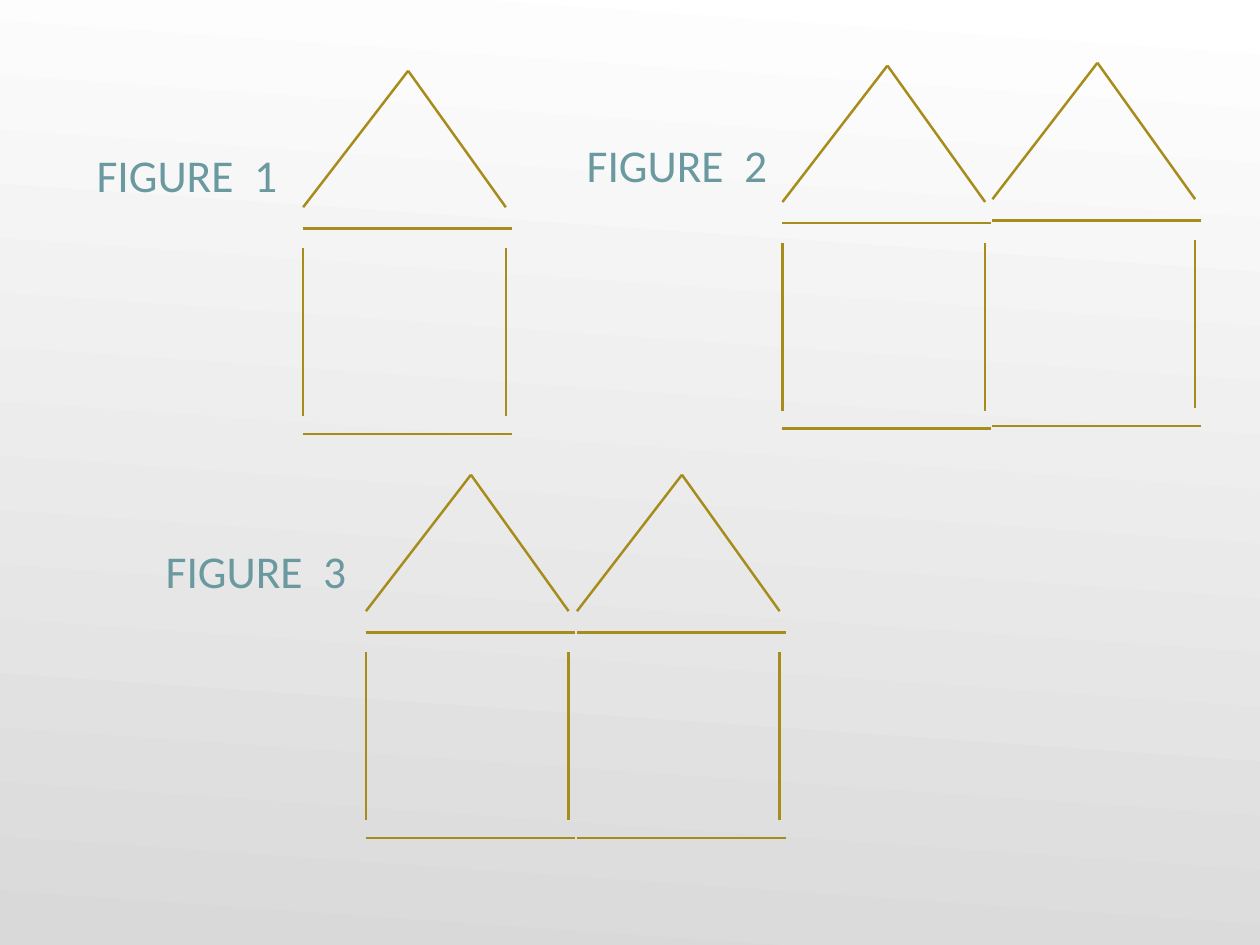
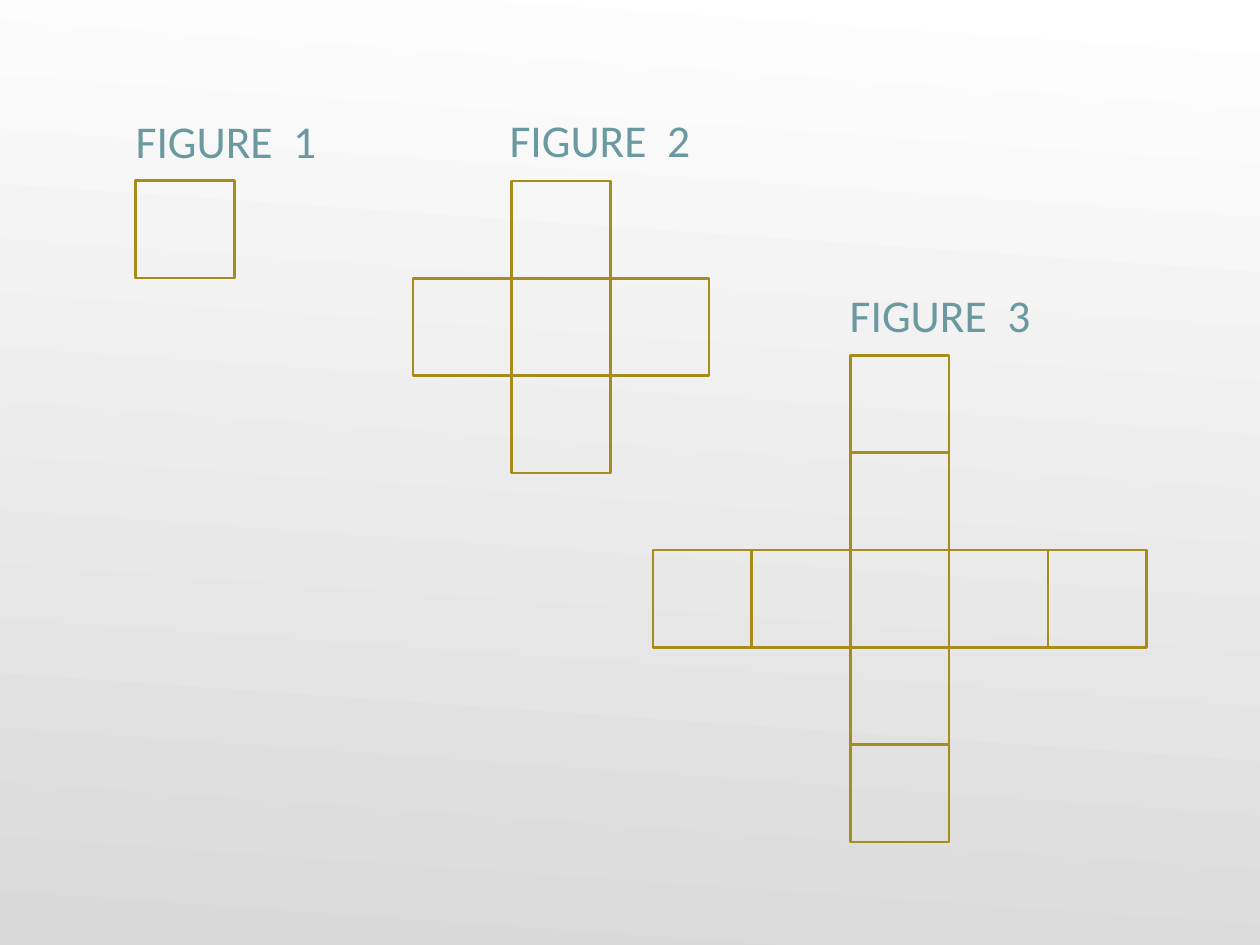
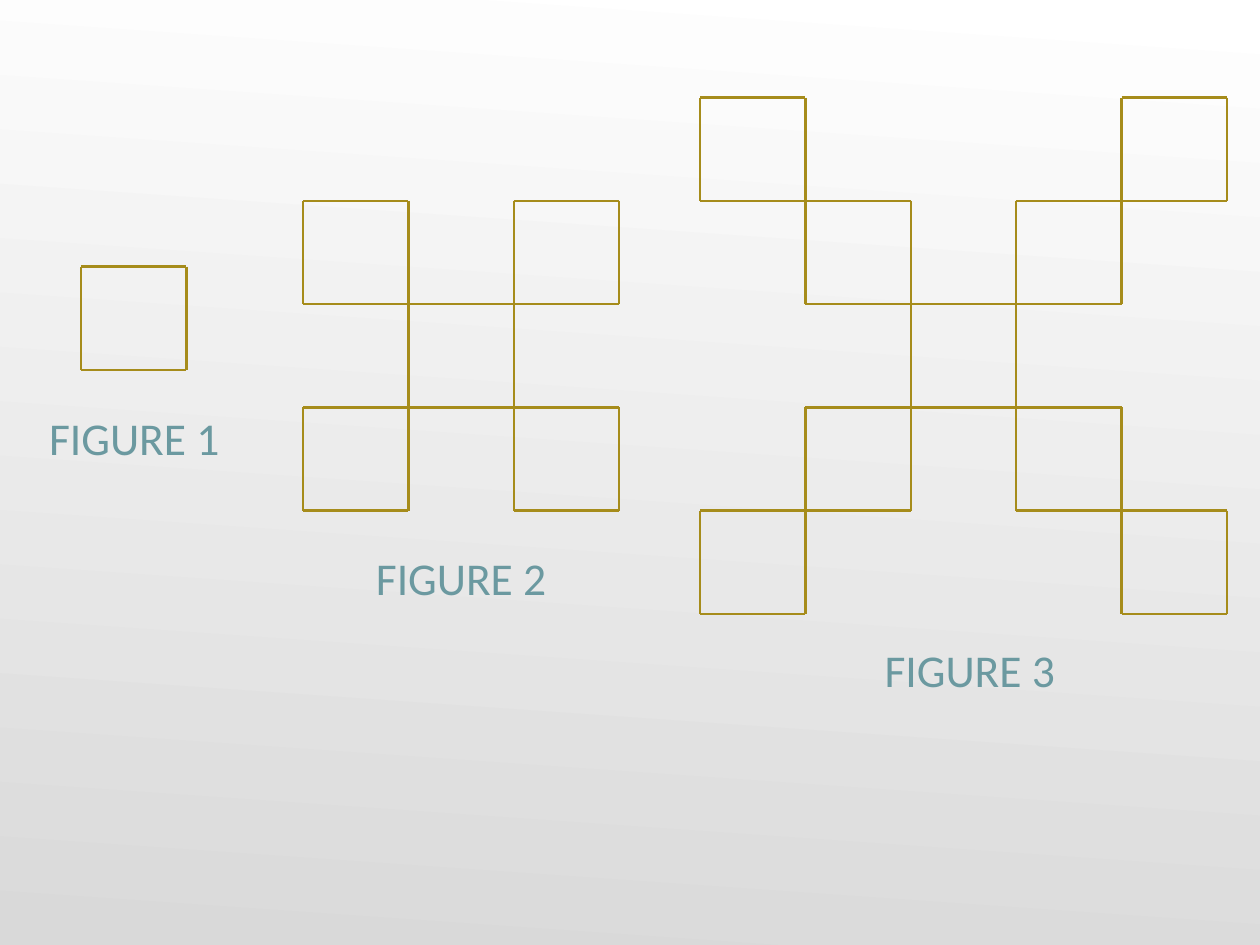
from lxml.etree import SubElement
from pptx import Presentation
from pptx.dml.color import RGBColor
from pptx.enum.shapes import MSO_CONNECTOR, MSO_SHAPE
from pptx.enum.text import MSO_AUTO_SIZE, PP_ALIGN
from pptx.oxml.ns import qn
from pptx.util import Cm, Pt

WHITE = RGBColor(0xFF, 0xFF, 0xFF)
GREY = RGBColor(0xD9, 0xD9, 0xD9)
GOLD = RGBColor(0xA6, 0x8C, 0x1B)
TEAL = RGBColor(0x6B, 0x99, 0xA0)
CROSS_DIRS = [(0, -1), (-1, 0), (0, 1), (1, 0)]
DIAGONAL_DIRS = [(-1, -1), (1, -1), (-1, 1), (1, 1)]


def arm_cells(dirs, reach):
    return [(0, 0)] + [(dx * n, dy * n) for n in range(1, reach + 1) for dx, dy in dirs]


class Deck:
    font = "Calibri"
    size = Pt(37)
    line_width = Pt(2)

    def __init__(self):
        self.prs = Presentation()
        self.prs.slide_width, self.prs.slide_height = Cm(36.12), Cm(27.09)
        fill = self.prs.slide_master.background.fill
        fill.gradient()
        fill.gradient_angle = 266
        for stop, color in zip(fill.gradient_stops, (WHITE, GREY)):
            stop.color.rgb = color
        self.s = None
        self.shapes = None

    def slide(self):
        self.s = self.prs.slides.add_slide(self.prs.slide_layouts[6])

    def group(self):
        self.shapes = self.s.shapes.add_group_shape().shapes

    def stroke(self, sp):
        sp.line.color.rgb = GOLD
        sp.line.width = self.line_width

    def line(self, x1, y1, x2, y2):
        c = self.shapes.add_connector(MSO_CONNECTOR.STRAIGHT, Cm(x1), Cm(y1), Cm(x2), Cm(y2))
        self.stroke(c)
        SubElement(c._element.spPr, qn("a:effectLst"))

    def square(self, x, y, w, h):
        sp = self.shapes.add_shape(MSO_SHAPE.RECTANGLE, Cm(x), Cm(y), Cm(w), Cm(h))
        sp.shadow.inherit = False
        sp.fill.background()
        self.stroke(sp)

    def stick_square(self, x, y, w, h):
        for left in (x, x + w):
            self.line(left, y, left, y + h)
        for top in (y + h, y):
            self.line(x, top, x + w, top)

    def stick_house(self, x, y, left_wall):
        right = x + 5.81
        for wall in ([x] if left_wall else []) + [right]:
            self.line(wall, y + 5.08, wall, y + 9.9)
        for top in (y + 10.41, y + 4.52):
            self.line(x, top, x + 5.99, top)
        for eave in (right, x):
            self.line(x + 3.01, y, eave, y + 3.91)

    def label(self, text, x, y, w):
        tf = self.s.shapes.add_textbox(Cm(x), Cm(y), Cm(w), Cm(1.83)).text_frame
        tf.word_wrap = False
        tf.auto_size = MSO_AUTO_SIZE.SHAPE_TO_FIT_TEXT
        p = tf.paragraphs[0]
        p.alignment = PP_ALIGN.CENTER
        r = p.add_run()
        r.text = text
        r.font.name = self.font
        r.font.size = self.size
        r.font.color.rgb = TEAL

    def labels(self, prefix, w, places):
        for n, (x, y) in enumerate(places, 1):
            self.label(f"{prefix}{n}", x, y, w)

    def pattern(self, draw, dirs, w, h, centres):
        for reach, (x, y) in enumerate(centres):
            self.group()
            for col, row in arm_cells(dirs, reach):
                draw(x + col * w, y + row * h, w, h)


def main():
    deck = Deck()

    deck.slide()
    figures = [
        [(8.69, 2.03)],
        [(22.43, 1.88), (28.45, 1.8)],
        [(10.49, 13.61), (16.54, 13.61)],
    ]
    for houses in figures:
        deck.group()
        for n, (x, y) in enumerate(houses):
            deck.stick_house(x, y, left_wall=n == 0)
    deck.labels("FIGURE  ", 5.74, [(2.49, 4.09), (16.54, 3.81), (4.47, 15.44)])

    deck.slide()
    deck.pattern(deck.square, CROSS_DIRS, 2.83, 2.79,
                 [(3.89, 5.18), (14.67, 7.98), (24.38, 15.77)])
    deck.labels("FIGURE  ", 5.74, [(3.61, 3.12), (14.33, 3.1), (24.08, 8.1)])

    deck.slide()
    deck.pattern(deck.stick_square, DIAGONAL_DIRS, 3.02, 2.96,
                 [(2.32, 7.64), (11.71, 8.72), (26.11, 8.72)])
    deck.labels("FIGURE ", 5.46, [(1.12, 11.63), (10.49, 15.65), (25.07, 18.29)])

    deck.prs.save("out.pptx")


if __name__ == "__main__":
    main()
